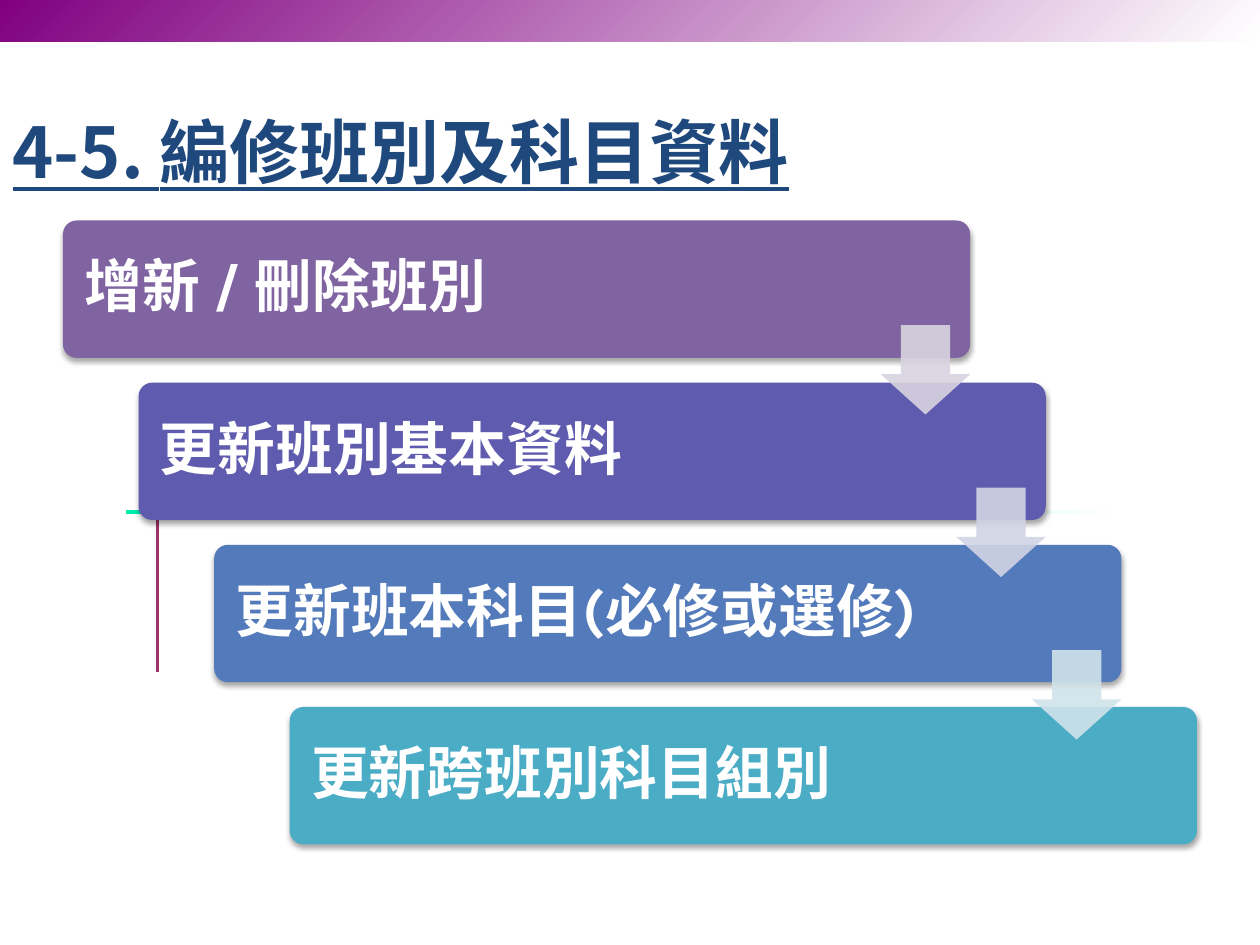
from lxml.etree import SubElement as Sub
from pptx import Presentation
from pptx.dml.color import RGBColor
from pptx.enum.shapes import MSO_CONNECTOR as Conn, MSO_SHAPE as Shape
from pptx.enum.text import MSO_ANCHOR as Anchor, PP_ALIGN as Align
from pptx.oxml.ns import qn
from pptx.util import Inches, Pt

CJK = "Noto Sans CJK TC"


def color(code):
    return RGBColor.from_string(code)


def style(para, face, size, code):
    for run in para.runs:
        font = run.font
        font.name, font.size, font.bold = face, Pt(size), True
        font.color.rgb = color(code)
        Sub(run._r.get_or_add_rPr(), qn("a:ea"), typeface=CJK)


prs = Presentation()
prs.slide_width, prs.slide_height = Inches(10), Inches(7.5)
slide = prs.slides.add_slide(prs.slide_layouts[5])
shapes = slide.shapes

# Background line and gradient bars
rule = shapes.add_connector(
    Conn.STRAIGHT, Inches(1.25), Inches(3.5), Inches(1.25), Inches(5.33))
rule.line.color.rgb = color("993366")
rule.line.width = Pt(2.25)
Sub(rule._element.spPr, qn("a:effectLst"))

bars = [(1, 4.05, 7.87, 0.03, "00ECAE", 0), (0, 0, 10, 0.33, "800080", 315)]
for x, y, w, h, start, angle in bars:
    bar = shapes.add_shape(
        Shape.RECTANGLE, Inches(x), Inches(y), Inches(w), Inches(h))
    bar.shadow.inherit = False
    bar.line.fill.background()
    bar.fill.gradient()
    bar.fill.gradient_angle = angle
    for stop, code, spot in zip(bar.fill.gradient_stops, (start, "FFFFFF"), (0, 1)):
        stop.color.rgb = color(code)
        stop.position = spot

# Title
title = shapes.title
title.left, title.top = Inches(0), Inches(0.75)
title.width, title.height = Inches(7.83), Inches(0.83)
frame = title.text_frame
frame.text = "4-5. 編修班別及科目資料"
frame.vertical_anchor = Anchor.BOTTOM
para = frame.paragraphs[0]
para.alignment = Align.LEFT
style(para, CJK, 40, "1F497D")
para.runs[0].font.underline = True

# Steps, each lower and further right
steps = [
    ("增新 / 刪除班別", "8064A2", 5.93),
    ("更新班別基本資料", "5F5BAE", 5.83),
    ("更新班本科目(必修或選修)", "537ABA", 5.83),
    ("更新跨班別科目組別", "4BACC6", 5.83),
]
for i, (text, code, wide) in enumerate(steps):
    x, y = 0.5 + 0.6 * i, 1.75 + 1.287 * i
    box = shapes.add_shape(
        Shape.ROUNDED_RECTANGLE, Inches(x), Inches(y), Inches(7.2), Inches(1.09))
    box.adjustments[0] = 0.1
    box.fill.solid()
    box.fill.fore_color.rgb = color(code)
    box.line.fill.background()
    box.shadow.inherit = False
    effect = box._element.spPr.find(qn("a:effectLst"))
    shade = Sub(effect, qn("a:outerShdw"), blurRad=str(Pt(3.1)),
                dist=str(Pt(1.8)), dir="5400000", rotWithShape="0")
    black = Sub(shade, qn("a:srgbClr"), val="000000")
    Sub(black, qn("a:alpha"), val="35000")

    label = shapes.add_textbox(
        Inches(x + 0.03), Inches(y + 0.03), Inches(wide), Inches(1.03))
    frame = label.text_frame
    frame.word_wrap = True
    frame.vertical_anchor = Anchor.MIDDLE
    frame.margin_left = frame.margin_right = Inches(0.14)
    frame.margin_top = frame.margin_bottom = Inches(0.14)
    frame.text = text
    para = frame.paragraphs[0]
    para.line_spacing = 0.9
    style(para, "Karla", 33, "FFFFFF")

# Arrows between steps
for i, code in enumerate(["D8D3E0", "D1D4E5", "D0E3EA"]):
    arrow = shapes.add_shape(
        Shape.DOWN_ARROW, Inches(6.99 + 0.6 * i), Inches(2.58 + 1.29 * i),
        Inches(0.71), Inches(0.71))
    # Head length first, then shaft width
    arrow.adjustments[0], arrow.adjustments[1] = 0.55, 0.45
    arrow.shadow.inherit = False
    arrow.line.fill.background()
    arrow.fill.solid()
    arrow.fill.fore_color.rgb = color(code)
    tint = arrow._element.spPr.find(qn("a:solidFill"))[0]
    Sub(tint, qn("a:alpha"), val="90000")

prs.save("out.pptx")
